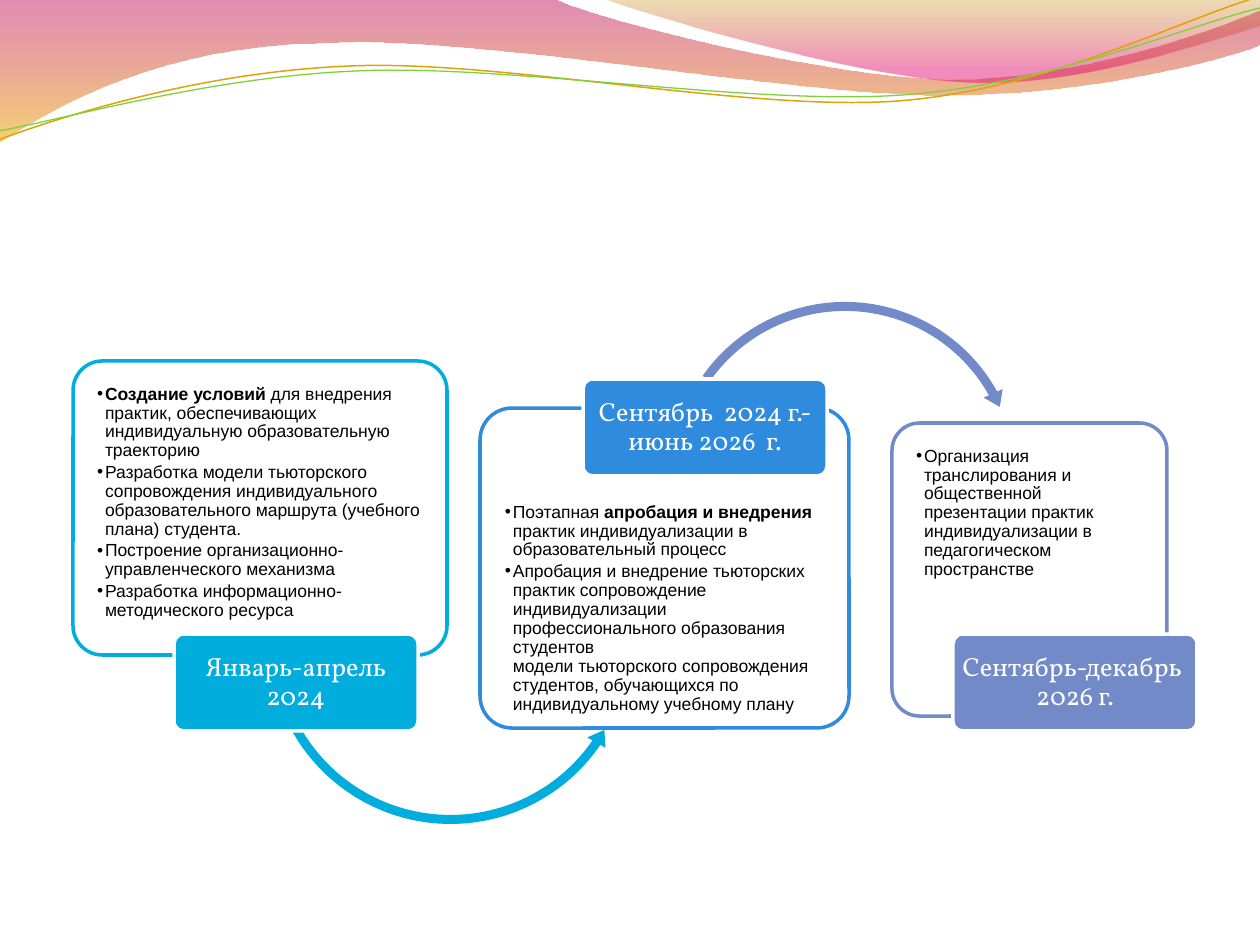
import copy

import pptx
import pptx.dml.color
import pptx.enum.shapes
import pptx.enum.text
import pptx.oxml.ns
import pptx.util
from lxml import etree

RGBColor = pptx.dml.color.RGBColor
MSO_SHAPE = pptx.enum.shapes.MSO_SHAPE
PP_ALIGN = pptx.enum.text.PP_ALIGN
MSO_ANCHOR = pptx.enum.text.MSO_ANCHOR
Pt = pptx.util.Pt
qn = pptx.oxml.ns.qn

WHITE = RGBColor(0xFF, 0xFF, 0xFF)
BLACK = RGBColor(0x00, 0x00, 0x00)
CYAN = RGBColor(0x00, 0xAD, 0xDC)
BLUE = RGBColor(0x2F, 0x8B, 0xDD)
VIOLET = RGBColor(0x73, 0x8A, 0xC8)
CRIMSON = RGBColor(0xBD, 0x00, 0x59)
AMBER = RGBColor(0xF0, 0xAB, 0x00)
OCHRE = RGBColor(0xC3, 0x8B, 0x00)
PINK = RGBColor(0xE1, 0x00, 0x6B)
GOLD = RGBColor(0xE0, 0xA2, 0x09)
GREEN = RGBColor(0x7F, 0xD1, 0x3B)

EMU_PER_PX = 914400 / 126
LABEL_SIZE = (244, 97)

# Wave outlines: a start point, then lines (x, y) and Bezier curves (six numbers).
WIDE_WAVE = [(0, 0), (554, -1), (600, 21, 837, 79, 955, 79),
             (1075, 79, 1207, 33, 1260, 11), (1261, 45),
             (1239, 55, 1096, 96, 940, 95), (784, 95, 481, 35, 324, 43),
             (163, 45, 58, 105, -1, 142), (0, 0)]
RIGHT_WAVE = [(604, -1), (641, 14, 859, 78, 969, 82),
              (1079, 87, 1211, 40, 1260, 26), (1260, 0), (604, -1)]
GOLD_LINE = [(-2, 140), (60, 117, 199, 72, 349, 66),
             (498, 59, 747, 112, 898, 101), (1049, 89, 1182, 19, 1258, -3)]
GREEN_LINE = [(-2, 131), (59, 121, 207, 77, 357, 71),
              (508, 64, 752, 106, 903, 95), (1053, 84, 1186, 26, 1260, 8)]

# Each stage: colour, card box, text box, items (** marks bold), label position, label.
STAGES = [
    (CYAN, (73, 361, 374, 294), (79, 367, 360, 217),
     ["**Создание условий** для внедрения практик, обеспечивающих "
      "индивидуальную образовательную траекторию",
      "Разработка модели тьюторского сопровождения индивидуального "
      "образовательного маршрута (учебного плана) студента.",
      "Построение организационно-управленческого механизма",
      "Разработка информационно-методического ресурса"],
     (174, 634), "Январь-апрель 2024"),
    (BLUE, (480, 408, 369, 320), (487, 485, 354, 237),
     ["Поэтапная **апробация и внедрения **практик индивидуализации "
      "в образовательный процесс",
      "Апробация и внедрение тьюторских практик сопровождение "
      "индивидуализации профессионального образования студентов\n"
      "модели тьюторского сопровождения студентов, обучающихся по "
      "индивидуальному учебному плану"],
     (583, 379), "Сентябрь  2024 г.- июнь 2026  г."),
    (VIOLET, (892, 423, 275, 293), (898, 429, 261, 217),
     ["Организация транслирования и общественной презентации практик "
      "индивидуализации в педагогическом пространстве"],
     (953, 634), "Сентябрь-декабрь \n2026 г."),
]

# Arrow leaving each stage: kind, colour, box, adjustments in percent.
ARROWS = [
    (MSO_SHAPE.LEFT_CIRCULAR_ARROW, CYAN, (263, 455, 375, 375),
     (2.4, 292.6, 2069.2, 9025.6, 2.8)),
    (MSO_SHAPE.CIRCULAR_ARROW, VIOLET, (665, 296, 360, 360),
     (2.5, 305.5, 19851.4, 12907.9, 2.9)),
    None,
]


def px(value):
    return pptx.util.Emu(round(value * EMU_PER_PX))


def add_outline(slide, segments, close):
    """Draw all points as lines, then join each curve's three points into one Bezier."""
    points = [(px(x), px(y)) for seg in segments for x, y in zip(seg[::2], seg[1::2])]
    builder = slide.shapes.build_freeform(*points[0])
    builder.add_line_segments(points[1:], close=close)
    sp = builder.convert_to_shape()
    sp.shadow.inherit = False
    lines = iter(list(sp._element.iter(qn("a:lnTo"))))
    for seg in segments[1:]:
        line = next(lines)
        if len(seg) == 6:
            curve = etree.Element(qn("a:cubicBezTo"))
            line.addprevious(curve)
            for part in (line, next(lines), next(lines)):
                curve.append(part[0])
                part.getparent().remove(part)
    return sp


def add_wave(slide, segments, stops):
    """Add a filled wave; stops hold position, colour and opacity in percent."""
    sp = add_outline(slide, segments, True)
    sp.line.fill.background()
    sp.fill.gradient()
    sp.fill.gradient_angle = 270
    for stop, (position, color, _) in zip(sp.fill.gradient_stops, stops):
        stop.position = position
        stop.color.rgb = color
    for clr, (_, _, opacity) in zip(sp._element.spPr.iter(qn("a:srgbClr")), stops):
        etree.SubElement(clr, qn("a:alpha"), val=str(opacity * 1000))


def add_wave_line(slide, segments, color, width):
    sp = add_outline(slide, segments, False)
    sp.fill.background()
    sp.line.color.rgb = color
    sp.line.width = Pt(width)


def add_shape(slide, kind, box, adjustments, fill, line=None):
    sp = slide.shapes.add_shape(kind, *map(px, box))
    sp.shadow.inherit = False
    for i, percent in enumerate(adjustments):
        sp.adjustments[i] = percent / 100
    sp.fill.solid()
    sp.fill.fore_color.rgb = fill
    if line is None:
        sp.line.fill.background()
    else:
        sp.line.color.rgb = line
        sp.line.width = Pt(2)


def add_text_frame(slide, box, side, top):
    tf = slide.shapes.add_textbox(*map(px, box)).text_frame
    tf.word_wrap = True
    tf.margin_left = tf.margin_right = px(side)
    tf.margin_top = tf.margin_bottom = px(top)
    return tf


def add_runs(p, text, font, size, color):
    """Fill a paragraph, with ** around bold parts and line feeds as breaks."""
    for i, part in enumerate(text.split("**")):
        for j, line in enumerate(part.split("\n")):
            if j:
                p.add_line_break()
            if not line:
                continue
            r = p.add_run()
            r.text = line
            r.font.name = font
            r.font.size = Pt(size)
            r.font.bold = i % 2 == 1
            r.font.color.rgb = color
    for br in p._p.findall(qn("a:br")):
        br.append(copy.deepcopy(r._r.rPr))
    p.line_spacing = 0.9


def add_bullet(p):
    """Set the hanging indent, the bullet and a space after of 15 percent."""
    pPr = p._p.get_or_add_pPr()
    pPr.set("marL", str(px(8)))
    pPr.set("indent", str(px(-8)))
    space = etree.SubElement(pPr, qn("a:spcAft"))
    etree.SubElement(space, qn("a:spcPct"), val="15000")
    etree.SubElement(pPr, qn("a:buFont"), typeface="Arial")
    etree.SubElement(pPr, qn("a:buChar"), char="•")


def add_items(slide, box, items):
    tf = add_text_frame(slide, box, 18, 18)
    for i, item in enumerate(items):
        p = tf.add_paragraph() if i else tf.paragraphs[0]
        add_bullet(p)
        add_runs(p, item, "Arial", 10, BLACK)


def add_label(slide, position, color, text):
    add_shape(slide, MSO_SHAPE.ROUNDED_RECTANGLE, position + LABEL_SIZE, [10], color, WHITE)
    (x, y), (w, h) = position, LABEL_SIZE
    tf = add_text_frame(slide, (x + 3, y + 3, w - 6, h - 6), 4, 2)
    tf.vertical_anchor = MSO_ANCHOR.MIDDLE
    p = tf.paragraphs[0]
    add_runs(p, text, "Vollkorn", 15, WHITE)
    p.alignment = PP_ALIGN.CENTER


def main():
    prs = pptx.Presentation()
    prs.slide_width, prs.slide_height = px(1260), px(945)
    slide = prs.slides.add_slide(prs.slide_layouts[6])
    add_wave(slide, WIDE_WAVE, [(0, CRIMSON, 45), (1, AMBER, 55)])
    add_wave(slide, RIGHT_WAVE, [(0, OCHRE, 30), (0.8, PINK, 45)])
    add_wave_line(slide, GOLD_LINE, GOLD, 0.85)
    add_wave_line(slide, GREEN_LINE, GREEN, 0.75)
    for (color, card, text_box, items, position, label), arrow in zip(STAGES, ARROWS):
        add_shape(slide, MSO_SHAPE.ROUNDED_RECTANGLE, card, [10], WHITE, color)
        add_items(slide, text_box, items)
        if arrow:
            kind, arrow_color, arrow_box, adjustments = arrow
            add_shape(slide, kind, arrow_box, adjustments, arrow_color)
        add_label(slide, position, color, label)
    prs.save("out.pptx")


if __name__ == "__main__":
    main()
